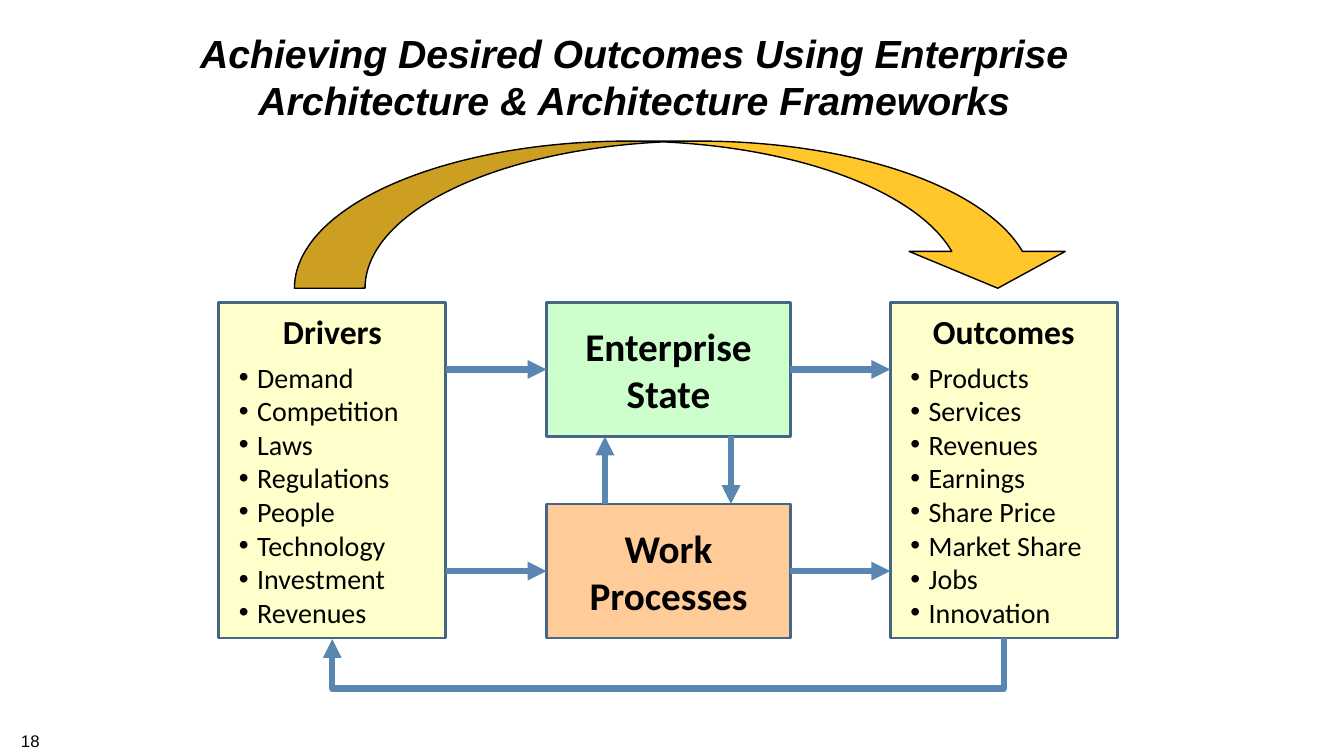
from lxml import etree
from pptx import Presentation
from pptx.dml.color import RGBColor
from pptx.enum.shapes import MSO_CONNECTOR, MSO_SHAPE
from pptx.enum.text import MSO_ANCHOR, MSO_AUTO_SIZE, PP_ALIGN
from pptx.oxml.ns import qn
from pptx.util import Inches, Pt

RECT, ARC = MSO_SHAPE.RECTANGLE, MSO_SHAPE.CURVED_DOWN_ARROW
LINE, ELBOW = MSO_CONNECTOR.STRAIGHT, MSO_CONNECTOR.ELBOW
MIDDLE, FIXED = MSO_ANCHOR.MIDDLE, MSO_AUTO_SIZE.NONE
LEFT, CENTER = PP_ALIGN.LEFT, PP_ALIGN.CENTER

COLORS = {"black": "000000", "yellow": "FFFFCC", "green": "CCFFCC",
          "orange": "FFCC99", "gold": "FFC72C", "edge": "466685", "arrow": "5A87B2"}
TITLE = "Achieving Desired Outcomes Using Enterprise Architecture & Architecture Frameworks"
NUMBER = "18"
LISTS = {
    "Drivers": ["Demand", "Competition", "Laws", "Regulations",
                "People", "Technology", "Investment", "Revenues"],
    "Outcomes": ["Products", "Services", "Revenues", "Earnings",
                 "Share Price", "Market Share", "Jobs", "Innovation"],
}
STAGES = [("Enterprise State", "green"), ("Work Processes", "orange")]

TOP, TALL = 3, 3.33
SIDE_X = {"Drivers": 2.17, "Outcomes": 8.83}
SIDE_W = 2.25
STAGE_X, STAGE_W, STAGE_H, STEP = 5.42, 2.42, 1.33, 2
UP_X, DOWN_X = 6, 7.25
DROP = 0.51


def color(name):
    return RGBColor.from_string(COLORS[name])


def write(para, text, size, font="Calibri", bold=False, italic=False, align=LEFT, after=0):
    para.alignment, para.space_after, para.space_before = align, Pt(after), Pt(0)
    run = para.add_run()
    run.text = text
    face = run.font
    face.name, face.size, face.bold, face.italic = font, Pt(size), bold, italic
    face.color.rgb = color("black")


def bullet(para):
    props = para._p.get_or_add_pPr()
    props.set("marL", str(Inches(0.18)))
    props.set("indent", str(Inches(-0.18)))
    etree.SubElement(props, qn("a:buFont")).set("typeface", "Arial")
    etree.SubElement(props, qn("a:buChar")).set("char", "•")


def draw(kind, x, y, w, h, fill, edge="edge", weight=2):
    shape = slide.shapes.add_shape(kind, Inches(x), Inches(y), Inches(w), Inches(h))
    shape.shadow.inherit = False
    shape.fill.solid()
    shape.fill.fore_color.rgb = color(fill)
    shape.line.color.rgb = color(edge)
    shape.line.width = Pt(weight)
    shape.text_frame.word_wrap = True
    shape.text_frame.vertical_anchor = MIDDLE
    return shape


def arrow(x1, y1, x2, y2, kind=LINE):
    link = slide.shapes.add_connector(kind, Inches(x1), Inches(y1), Inches(x2), Inches(y2))
    link.line.color.rgb = color("arrow")
    link.line.width = Pt(4.5)
    etree.SubElement(link.line._get_or_add_ln(), qn("a:tailEnd")).set("type", "triangle")
    etree.SubElement(link._element.spPr, qn("a:effectLst"))
    return link


def loop(start, end, y):
    """Feedback arrow: an upright elbow turned a quarter, bulging below y."""
    thin, span = 0.01, start - end
    x, top = (start + end - thin) / 2, y + (thin - span) / 2
    link = arrow(x, top, x + thin, top + span, ELBOW)
    props = link._element.spPr
    props.find(qn("a:xfrm")).set("rot", str(90 * 60000))
    geom = props.find(qn("a:prstGeom"))
    guides = geom.find(qn("a:avLst"))
    if guides is None:
        guides = etree.SubElement(geom, qn("a:avLst"))
    guide = etree.SubElement(guides, qn("a:gd"))
    guide.set("name", "adj1")
    guide.set("fmla", f"val {round(DROP / thin * 100000)}")


deck = Presentation()
deck.slide_width, deck.slide_height = Inches(13.33), Inches(7.5)
slide = deck.slides.add_slide(deck.slide_layouts[5])

title = slide.shapes.title
title.left, title.top = Inches(1.5), Inches(0.18)
title.width, title.height = Inches(9.58), Inches(1.15)
frame = title.text_frame
frame.word_wrap, frame.auto_size, frame.vertical_anchor = True, FIXED, MIDDLE
write(frame.paragraphs[0], TITLE, 28, font="Arial", bold=True, italic=True, align=CENTER)

page = slide.shapes.add_textbox(Inches(0.11), Inches(7.2), Inches(1.01), Inches(0.3))
page.text_frame.word_wrap = True
write(page.text_frame.paragraphs[0], NUMBER, 12, font="Arial")

for head, items in LISTS.items():
    frame = draw(RECT, SIDE_X[head], TOP, SIDE_W, TALL, "yellow").text_frame
    frame.margin_left = frame.margin_right = Inches(0.2)
    write(frame.paragraphs[0], head, 24, bold=True, align=CENTER, after=6)
    for item in items:
        para = frame.add_paragraph()
        write(para, item, 20)
        bullet(para)

for row, (name, fill) in enumerate(STAGES):
    y = TOP + row * STEP
    stage = draw(RECT, STAGE_X, y, STAGE_W, STAGE_H, fill)
    write(stage.text_frame.paragraphs[0], name, 28, bold=True, align=CENTER)
    mid = y + STAGE_H / 2
    arrow(SIDE_X["Drivers"] + SIDE_W, mid, STAGE_X, mid).end_connect(stage, 1)
    arrow(STAGE_X + STAGE_W, mid, SIDE_X["Outcomes"], mid).begin_connect(stage, 3)

arrow(UP_X, TOP + STEP, UP_X, TOP + STAGE_H)
arrow(DOWN_X, TOP + STAGE_H, DOWN_X, TOP + STEP)
loop(SIDE_X["Outcomes"] + SIDE_W / 2, SIDE_X["Drivers"] + SIDE_W / 2, TOP + TALL)

arc = draw(ARC, 2.92, 1.4, 7.75, 1.46, "gold", edge="black", weight=1)
for place, value in enumerate([0.48, 1.06, 0.25]):
    arc.adjustments[place] = value

deck.save("out.pptx")
